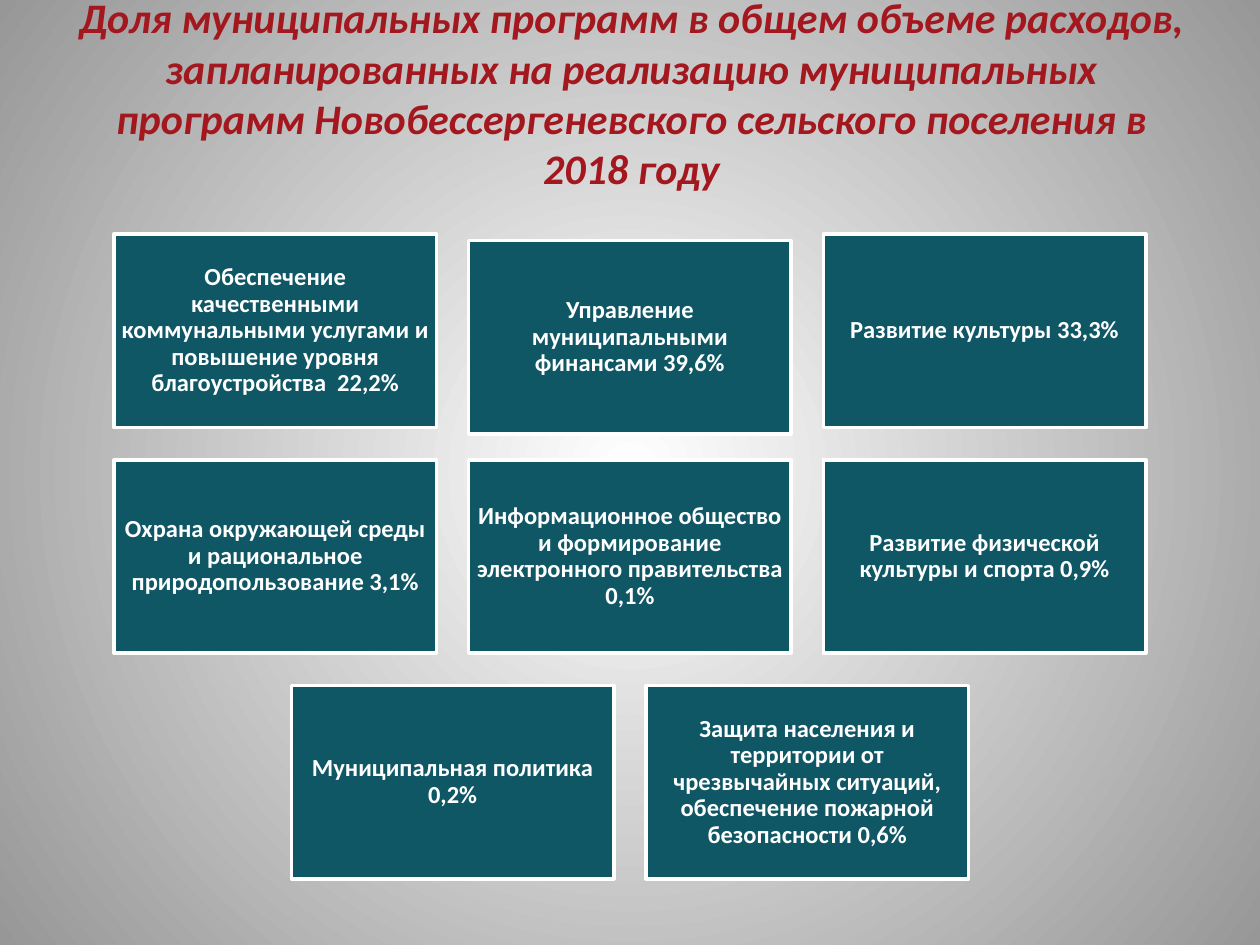
from lxml import etree
from pptx import Presentation
from pptx.dml.color import RGBColor
from pptx.enum.shapes import MSO_SHAPE
from pptx.enum.text import MSO_ANCHOR, PP_ALIGN
from pptx.oxml.ns import qn
from pptx.util import Cm, Pt

COLORS = {
    "title": "A3171E",
    "box": "105766",
    "white": "FFFFFF",
    "edge": "979797",
}
TITLE = (
    "Доля муниципальных программ в общем объеме расходов, "
    "запланированных на реализацию муниципальных программ "
    "Новобессергеневского сельского поселения в 2018 году"
)
PROGRAM_ROWS = [
    [
        "Обеспечение качественными коммунальными услугами и повышение уровня благоустройства  22,2%",
        "Управление муниципальными финансами 39,6%",
        "Развитие культуры 33,3%",
    ],
    [
        "Охрана окружающей среды и рациональное природопользование 3,1%",
        "Информационное общество и формирование электронного правительства 0,1%",
        "Развитие физической культуры и спорта 0,9%",
    ],
    [
        "Муниципальная политика 0,2%",
        "Защита населения и территории от чрезвычайных ситуаций, обеспечение пожарной безопасности 0,6%",
    ],
]
SLIDE_WIDTH, SLIDE_HEIGHT = 25.4, 19.05
BOX_WIDTH, BOX_HEIGHT, GAP = 6.5, 3.9, 0.65
FIRST_TOP = 4.72
MIDDLE_DROP = 0.13


def color(name):
    return RGBColor.from_string(COLORS[name])


def add_text(shape, text, size, color_name, italic=False):
    frame = shape.text_frame
    frame.word_wrap = True
    frame.vertical_anchor = MSO_ANCHOR.MIDDLE
    paragraph = frame.paragraphs[0]
    paragraph.alignment = PP_ALIGN.CENTER
    run = paragraph.add_run()
    run.text = text
    run.font.name = "Calibri"
    run.font.size = Pt(size)
    run.font.bold = True
    run.font.italic = italic
    run.font.color.rgb = color(color_name)
    return paragraph


presentation = Presentation()
presentation.slide_width = Cm(SLIDE_WIDTH)
presentation.slide_height = Cm(SLIDE_HEIGHT)
slide = presentation.slides.add_slide(presentation.slide_layouts[5])

background = slide.background.fill
background.gradient()
for stop, name in zip(background.gradient_stops, ("white", "edge")):
    stop.color.rgb = color(name)
gradient = slide.element.find(".//" + qn("a:gradFill"))
gradient.remove(gradient.find(qn("a:lin")))
gradient_path = etree.SubElement(gradient, qn("a:path"), {"path": "circle"})
center = {side: "50000" for side in ("l", "t", "r", "b")}
etree.SubElement(gradient_path, qn("a:fillToRect"), center)

title = slide.shapes.title
title.left, title.top = Cm(1.3), Cm(0)
title.width, title.height = Cm(22.86), Cm(3.73)
add_text(title, TITLE, 24, "title", italic=True)

for row, programs in enumerate(PROGRAM_ROWS):
    row_width = len(programs) * (BOX_WIDTH + GAP) - GAP
    row_left = (SLIDE_WIDTH - row_width) / 2
    for column, program in enumerate(programs):
        left = row_left + column * (BOX_WIDTH + GAP)
        top = FIRST_TOP + row * (BOX_HEIGHT + GAP)
        if (row, column) == (0, 1):
            top += MIDDLE_DROP
        box = slide.shapes.add_shape(
            MSO_SHAPE.RECTANGLE, Cm(left), Cm(top), Cm(BOX_WIDTH), Cm(BOX_HEIGHT)
        )
        box.shadow.inherit = False
        box.fill.solid()
        box.fill.fore_color.rgb = color("box")
        box.line.color.rgb = color("white")
        box.line.width = Pt(2)
        frame = box.text_frame
        frame.margin_left = frame.margin_right = Cm(0.15)
        frame.margin_top = frame.margin_bottom = Cm(0.15)
        paragraph = add_text(box, program, 14, "white")
        paragraph.line_spacing = 0.9
        paragraph.space_after = Pt(5)

presentation.save("out.pptx")
